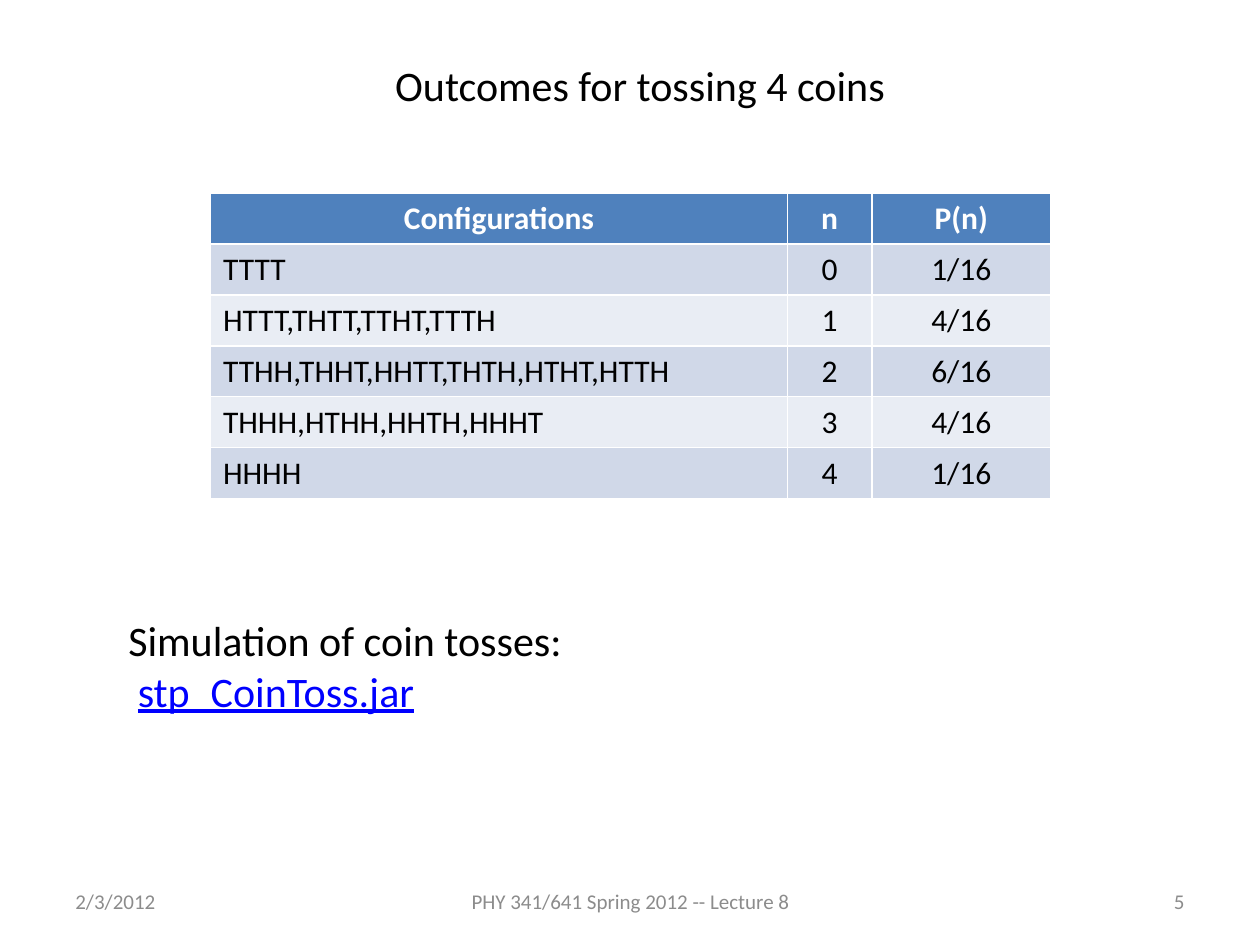
from pptx import Presentation
from pptx.dml.color import RGBColor
from pptx.enum.text import MSO_ANCHOR, PP_ALIGN
from pptx.util import Inches, Pt

LEFT, CENTER, RIGHT = PP_ALIGN.LEFT, PP_ALIGN.CENTER, PP_ALIGN.RIGHT
TOP, MIDDLE = MSO_ANCHOR.TOP, MSO_ANCHOR.MIDDLE

BLACK = RGBColor(0x00, 0x00, 0x00)
WHITE = RGBColor(0xFF, 0xFF, 0xFF)
GRAY = RGBColor(0x8C, 0x8C, 0x8C)
LINK_BLUE = RGBColor(0x00, 0x00, 0xFF)
HEADER_BLUE = RGBColor(0x4F, 0x81, 0xBD)
BANDS = (RGBColor(0xD0, 0xD8, 0xE8), RGBColor(0xE9, 0xED, 0xF4))

FONT = "Calibri"
BODY = {"size": Pt(24)}
LINK = {"size": Pt(24), "underline": True}
CELL = {"size": Pt(18), "bold": False}
HEADER = {"size": Pt(18), "bold": True}
FOOTER = {"size": Pt(12)}

COL_WIDTHS = (4.58, 0.67, 1.42)
COL_ALIGNS = (LEFT, CENTER, CENTER)
ROW_HEIGHT = 0.405
OUTCOMES = (
    ("Configurations", "n", "P(n)"),
    ("TTTT", "0", "1/16"),
    ("HTTT,THTT,TTHT,TTTH", "1", "4/16"),
    ("TTHH,THHT,HHTT,THTH,HTHT,HTTH", "2", "6/16"),
    ("THHH,HTHH,HHTH,HHHT", "3", "4/16"),
    ("HHHH", "4", "1/16"),
)
FOOTERS = (
    ("2/3/2012", 0.5, 2.33, LEFT),
    ("PHY 341/641 Spring 2012 -- Lecture 8", 3.42, 3.17, CENTER),
    ("5", 7.17, 2.33, RIGHT),
)


def add_run(p, text, values, color):
    r = p.add_run()
    r.text = text
    r.font.name = FONT
    r.font.color.rgb = color
    for name, value in values.items():
        setattr(r.font, name, value)


def write_line(p, text, values, color, align=LEFT):
    p.alignment = align
    add_run(p, text, values, color)


def add_text_box(slide, box, anchor=TOP):
    tf = slide.shapes.add_textbox(*map(Inches, box)).text_frame
    tf.word_wrap = True
    tf.vertical_anchor = anchor
    return tf


def set_title(slide, text, box):
    sp = slide.shapes.title
    sp.left, sp.top, sp.width, sp.height = map(Inches, box)
    sp.text_frame.vertical_anchor = TOP
    write_line(sp.text_frame.paragraphs[0], text, BODY, BLACK, CENTER)


def add_outcome_table(slide, left, top):
    table = slide.shapes.add_table(
        len(OUTCOMES), len(COL_WIDTHS), Inches(left), Inches(top),
        Inches(sum(COL_WIDTHS)), Inches(ROW_HEIGHT * len(OUTCOMES))).table
    for column, width in zip(table.columns, COL_WIDTHS):
        column.width = Inches(width)
    for i, row in enumerate(OUTCOMES):
        is_header = i == 0
        for j, text in enumerate(row):
            cell = table.cell(i, j)
            cell.fill.solid()
            cell.fill.fore_color.rgb = HEADER_BLUE if is_header else BANDS[(i - 1) % 2]
            write_line(cell.text_frame.paragraphs[0], text,
                       HEADER if is_header else CELL,
                       WHITE if is_header else BLACK,
                       CENTER if is_header else COL_ALIGNS[j])


def add_simulation_note(slide, box):
    tf = add_text_box(slide, box)
    write_line(tf.paragraphs[0], "Simulation of coin tosses:", BODY, BLACK)
    p = tf.add_paragraph()
    write_line(p, " ", BODY, BLACK)
    add_run(p, "stp_CoinToss.jar", LINK, LINK_BLUE)


def add_footers(slide, top, height):
    for text, left, width, align in FOOTERS:
        tf = add_text_box(slide, (left, top, width, height), MIDDLE)
        write_line(tf.paragraphs[0], text, FOOTER, GRAY, align)


def main():
    prs = Presentation()
    prs.slide_width, prs.slide_height = Inches(10), Inches(7.5)
    slide = prs.slides.add_slide(prs.slide_layouts[5])
    add_footers(slide, 6.95, 0.4)
    add_outcome_table(slide, 1.67, 1.53)
    set_title(slide, "Outcomes for tossing 4 coins", (1.58, 0.42, 7, 0.5))
    add_simulation_note(slide, (0.92, 4.83, 7.33, 0.91))
    prs.save("out.pptx")


if __name__ == "__main__":
    main()
